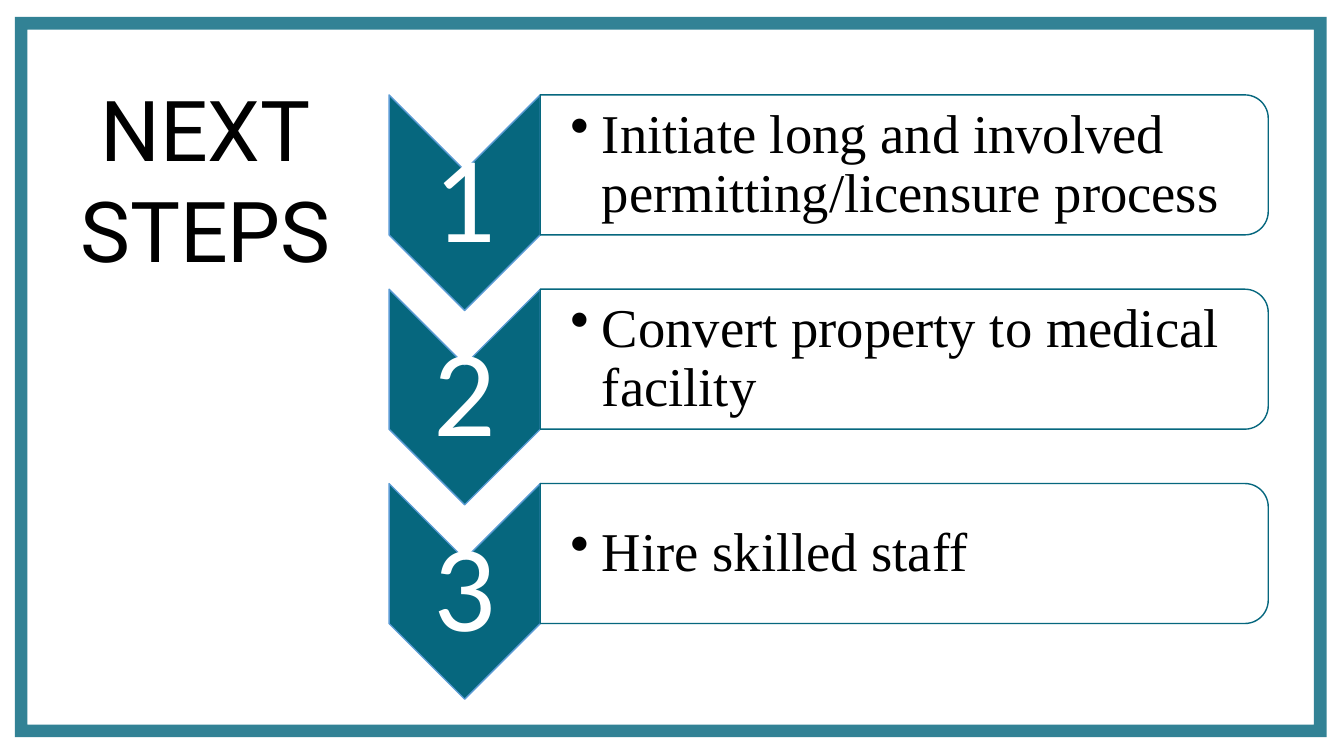
"""Build the NEXT STEPS slide: a framed title beside three numbered chevrons."""
from dataclasses import dataclass

from pptx import Presentation
from pptx.dml.color import RGBColor
from pptx.enum import shapes, text
from pptx.oxml import ns, xmlchemy
from pptx.util import Pt

TITLE = ["NEXT", "STEPS"]
STEPS = [
    "Initiate long and involved permitting/licensure process",
    "Convert property to medical facility",
    "Hire skilled staff",
]


@dataclass(frozen=True)
class Theme:
    teal: str = "06677E"
    blue: str = "5B9BD5"
    white: str = "FFFFFF"
    black: str = "000000"
    title_font: str = "Roboto"
    number_font: str = "Calibri"
    step_font: str = "Times New Roman"
    title_size: int = 60
    number_size: int = 88
    step_size: int = 39
    frame_width: int = 9
    outline_width: int = 1


THEME = Theme()
SLIDE = (960, 540)
FRAME = (15.1, 16.6, 928, 505.5)
TITLE_BOX = (26.6, 51.8, 240.5, 152.6)
LEFT, TOP, PITCH = 277.9, 67.8, 138.8
CHEVRON = (108, 154)
PANEL = (520, 100)
NUMBER_HEIGHT = 46
STEP_BOX = (515, 90)
HANGING = 22.5


def color(value):
    return RGBColor.from_string(value)


def add_element(parent, tag, **attributes):
    element = xmlchemy.OxmlElement(tag)
    for name, value in attributes.items():
        element.set(name, str(value))
    parent.append(element)
    return element


def add_shape(page, kind, place, line, width, fill=None):
    shape = page.shapes.add_shape(kind, *map(Pt, place))
    shape.shadow.inherit = False
    if fill:
        shape.fill.solid()
        shape.fill.fore_color.rgb = color(fill)
    else:
        shape.fill.background()
    shape.line.color.rgb = color(line)
    shape.line.width = Pt(width)
    return shape


def add_turned(page, kind, place, line, fill):
    left, top, width, height = place
    middle_x, middle_y = left + width / 2, top + height / 2
    unturned = (middle_x - height / 2, middle_y - width / 2, height, width)
    shape = add_shape(page, kind, unturned, line, THEME.outline_width, fill)
    shape.rotation = 90


def set_frame(box, margins, anchor, wrap=True):
    frame = box.text_frame
    frame.auto_size = text.MSO_AUTO_SIZE.NONE
    frame.word_wrap = wrap
    frame.vertical_anchor = anchor
    (frame.margin_left, frame.margin_top,
     frame.margin_right, frame.margin_bottom) = map(Pt, margins)
    return frame


def style(para, font, size, tint, align, spacing):
    para.alignment = align
    para.line_spacing = spacing
    para.font.name = font
    para.font.size = Pt(size)
    para.font.color.rgb = color(tint)


def add_border(page):
    border = add_shape(page, shapes.MSO_SHAPE.RECTANGLE, FRAME,
                       THEME.teal, THEME.frame_width)
    line = border.line._get_or_add_ln()
    add_element(line.find(".//" + ns.qn("a:srgbClr")), "a:alpha", val=81000)
    add_element(line, "a:miter", lim=800000)


def add_title(page):
    title = page.shapes.title
    title.left, title.top, title.width, title.height = map(Pt, TITLE_BOX)
    frame = set_frame(title, (7.2, 3.6, 7.2, 3.6), text.MSO_ANCHOR.TOP, False)
    frame.text = "\n".join(TITLE)
    for para in frame.paragraphs:
        style(para, THEME.title_font, THEME.title_size, THEME.black,
              text.PP_ALIGN.CENTER, 1.0)


def add_text(page, place, margins, words):
    box = page.shapes.add_textbox(*map(Pt, place))
    frame = set_frame(box, margins, text.MSO_ANCHOR.MIDDLE)
    frame.text = words
    return frame.paragraphs[0]


def add_step(page, index, words):
    top = TOP + index * PITCH
    width, height = CHEVRON
    add_turned(page, shapes.MSO_SHAPE.CHEVRON, (LEFT, top, width, height),
               THEME.blue, THEME.teal)
    number_top = top + (height - NUMBER_HEIGHT) / 2
    number = add_text(page, (LEFT, number_top, width, NUMBER_HEIGHT),
                      (4.3, 4.3, 4.3, 4.3), str(index + 1))
    style(number, THEME.number_font, THEME.number_size, THEME.white,
          text.PP_ALIGN.CENTER, 0.9)

    panel_left = LEFT + width
    add_turned(page, shapes.MSO_SHAPE.ROUND_2_SAME_RECTANGLE,
               (panel_left, top, *PANEL), THEME.teal, THEME.white)
    step_top = top + (PANEL[1] - STEP_BOX[1]) / 2
    step = add_text(page, (panel_left, step_top, *STEP_BOX),
                    (21.6, 2, 2, 2), words)
    properties = step._p.get_or_add_pPr()
    properties.set("marL", str(Pt(HANGING)))
    properties.set("indent", str(-Pt(HANGING)))
    add_element(properties, "a:buChar", char="•")
    style(step, THEME.step_font, THEME.step_size, THEME.black,
          text.PP_ALIGN.LEFT, 0.9)


def main():
    deck = Presentation()
    deck.slide_width, deck.slide_height = map(Pt, SLIDE)
    page = deck.slides.add_slide(deck.slide_layouts[5])
    add_border(page)
    add_title(page)
    for index, words in enumerate(STEPS):
        add_step(page, index, words)
    deck.save("out.pptx")


if __name__ == "__main__":
    main()
